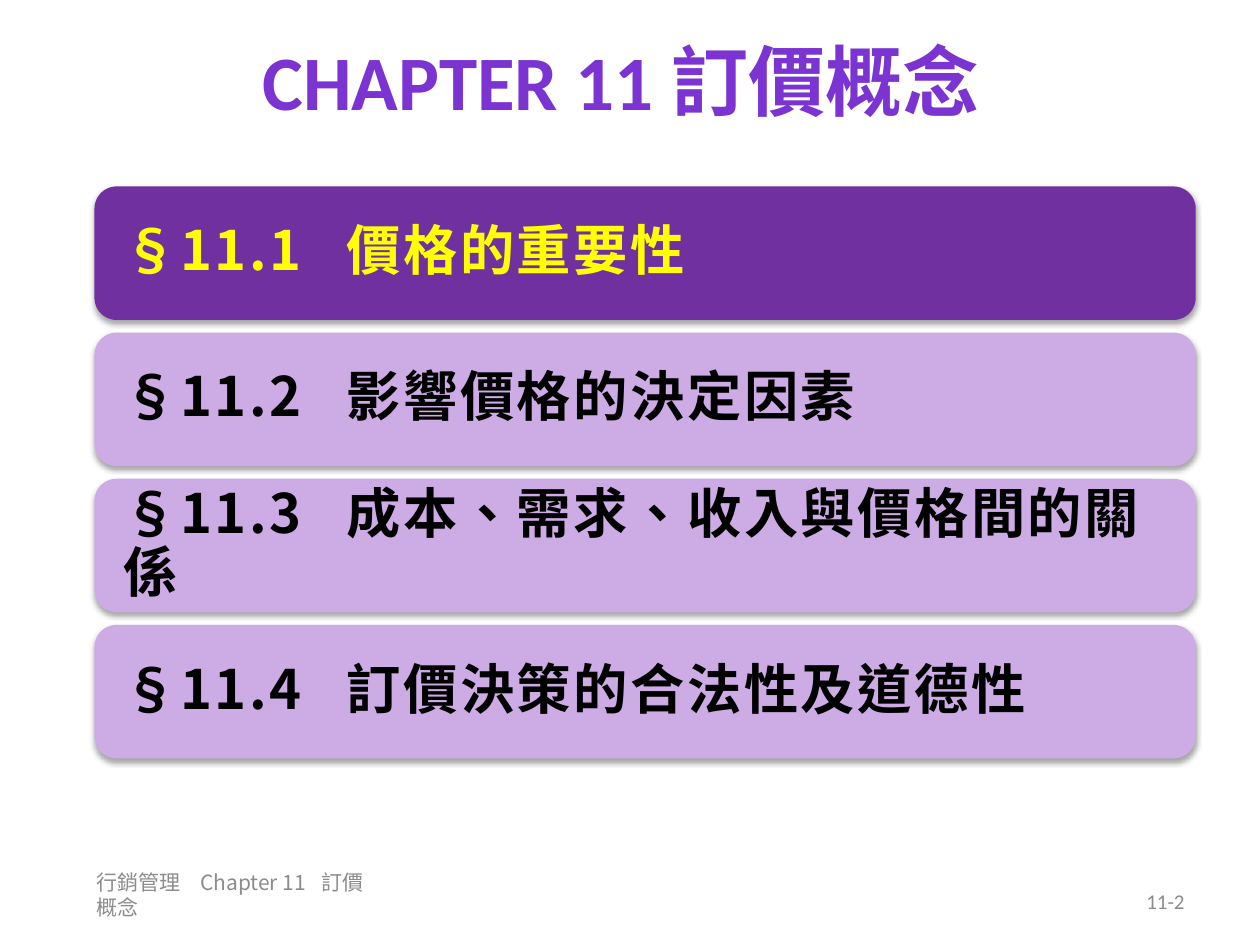
from lxml import etree
from pptx import Presentation
from pptx.dml.color import RGBColor
from pptx.enum.shapes import MSO_SHAPE
from pptx.enum.text import MSO_ANCHOR, PP_ALIGN
from pptx.oxml import parse_xml
from pptx.oxml.ns import nsdecls, qn
from pptx.util import Inches, Pt

COLORS = {
    "title": "7B34D2",
    "active": "7030A0",
    "active_text": "FFFF00",
    "section": "CDACE6",
    "section_text": "000000",
    "footer": "8C8C8C",
}
LATIN = "Calibri"
CJK = "Noto Sans CJK SC"
SHADOW = (
    f'<a:effectLst {nsdecls("a")}>'
    '<a:outerShdw blurRad="40000" dist="23000" dir="5400000" rotWithShape="0">'
    '<a:srgbClr val="000000"><a:alpha val="35000"/></a:srgbClr>'
    "</a:outerShdw></a:effectLst>"
)


class SlideBuilder:
    def __init__(self, prs):
        self.slide = prs.slides.add_slide(prs.slide_layouts[5])

    def format_run(self, r, size, color, font=CJK, bold=False, spacing=0):
        r.font.size = Pt(size)
        r.font.bold = bold
        r.font.name = font
        r.font.color.rgb = RGBColor.from_string(COLORS[color])
        rPr = r._r.get_or_add_rPr()
        rPr.set("lang", "zh-TW")
        if spacing:
            rPr.set("spc", str(int(spacing * 100)))
        latin = rPr.find(qn("a:latin"))
        ea = etree.Element(qn("a:ea"), typeface=CJK)
        latin.addnext(ea)

    def set_tabs(self, p, stops):
        tabs = etree.SubElement(p._p.get_or_add_pPr(), qn("a:tabLst"))
        for stop in stops:
            etree.SubElement(tabs, qn("a:tab"), pos=str(Inches(stop)), algn="l")

    def title(self, text, left, top, width, height):
        sp = self.slide.shapes.title
        sp.left, sp.top = Inches(left), Inches(top)
        sp.width, sp.height = Inches(width), Inches(height)
        tf = sp.text_frame
        tf.text = text
        tf.vertical_anchor = MSO_ANCHOR.MIDDLE
        p = tf.paragraphs[0]
        p.alignment = PP_ALIGN.CENTER
        self.format_run(p.runs[0], 44, "title", LATIN, bold=True)

    def section(self, number, name, top, active=False):
        sp = self.slide.shapes.add_shape(
            MSO_SHAPE.ROUNDED_RECTANGLE,
            Inches(0.75), Inches(top), Inches(8.74), Inches(1.06),
        )
        fill = "active" if active else "section"
        sp.fill.solid()
        sp.fill.fore_color.rgb = RGBColor.from_string(COLORS[fill])
        sp.line.fill.background()
        sp._element.spPr.append(parse_xml(SHADOW))
        tf = sp.text_frame
        tf.word_wrap = True
        tf.vertical_anchor = MSO_ANCHOR.MIDDLE
        tf.margin_left = tf.margin_right = Inches(0.18)
        tf.margin_top = tf.margin_bottom = Inches(0.18)
        p = tf.paragraphs[0]
        p.alignment = PP_ALIGN.LEFT
        p.line_spacing = 0.9
        self.set_tabs(p, [1.77])
        for text, font in ((f"{number}\t", CJK), (name, LATIN)):
            r = p.add_run()
            r.text = text
            self.format_run(r, 31, f"{fill}_text", font, bold=True, spacing=1.5)

    def footer(self, text, left, top, width, font, align=PP_ALIGN.LEFT, tabs=()):
        sp = self.slide.shapes.add_textbox(
            Inches(left), Inches(top), Inches(width), Inches(0.4)
        )
        tf = sp.text_frame
        tf.word_wrap = True
        tf.vertical_anchor = MSO_ANCHOR.MIDDLE
        tf.text = text
        p = tf.paragraphs[0]
        p.alignment = align
        if tabs:
            self.set_tabs(p, tabs)
        self.format_run(p.runs[0], 12, "footer", font)


def main():
    prs = Presentation()
    prs.slide_width, prs.slide_height = Inches(10), Inches(7.5)
    s = SlideBuilder(prs)
    s.footer("行銷管理\tChapter 11\t訂價概念", 0.67, 6.9, 2.44, CJK, tabs=(0.82, 1.78))
    s.footer("11-2", 7.17, 6.95, 2.33, LATIN, PP_ALIGN.RIGHT)
    s.title("CHAPTER 11 訂價概念", 0.43, 0.04, 9, 1.19)
    sections = (
        "價格的重要性",
        "影響價格的決定因素",
        "成本、需求、收入與價格間的關係",
        "訂價決策的合法性及道德性",
    )
    for i, name in enumerate(sections):
        s.section(f"§11.{i + 1}", name, 1.48 + 1.16 * i, active=i == 0)
    prs.save("out.pptx")


if __name__ == "__main__":
    main()
